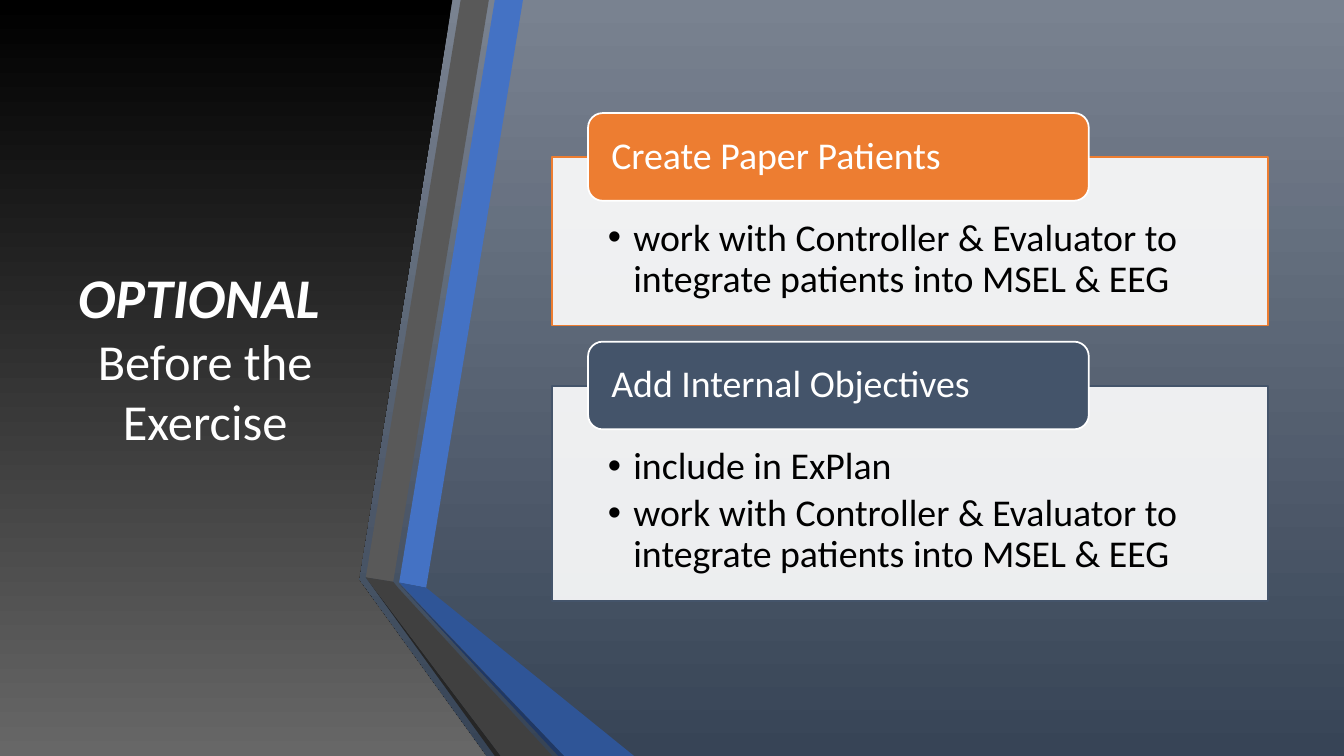
"""Builds the slide of optional steps before the exercise."""
from dataclasses import dataclass

from lxml.etree import SubElement
from pptx import Presentation
from pptx.dml.color import RGBColor
from pptx.enum.shapes import MSO_SHAPE as Preset
from pptx.enum.text import MSO_ANCHOR as Anchor, MSO_AUTO_SIZE as AutoSize, PP_ALIGN as Align
from pptx.oxml.ns import qn
from pptx.util import Cm, Pt


@dataclass(frozen=True)
class Theme:
    font: str = "Calibri"
    white: str = "FFFFFF"
    black: str = "000000"
    orange: str = "ED7D31"
    slate: str = "44546A"
    backdrop: tuple = ("798290", "374456")
    panel: tuple = ("000000", "676767")
    blue: str = "4472C4"
    blue_dark: str = "2F5597"
    blue_shade: str = "203864"
    grey: str = "595959"
    grey_dark: str = "404040"
    grey_shade: str = "262626"
    emphasis_size: float = 40
    title_size: float = 36
    text_size: float = 27
    outline: float = 1.25


class SlideBuilder:
    def __init__(self, slide, theme):
        self.slide, self.shapes, self.theme = slide, slide.shapes, theme

    def paint(self, fill, color):
        if isinstance(color, str):
            fill.solid()
            fill.fore_color.rgb = RGBColor.from_string(color)
            return
        fill.gradient()
        fill.gradient_angle = 270
        for stop, shade in zip(fill.gradient_stops, color):
            stop.color.rgb = RGBColor.from_string(shade)

    def outline(self, shape, color):
        self.paint(shape.line.fill, color)
        shape.line.width = Pt(self.theme.outline)

    def style(self, run, size, color, strong=False):
        run.font.name, run.font.size = self.theme.font, Pt(size)
        run.font.bold = run.font.italic = strong
        run.font.color.rgb = RGBColor.from_string(color)

    def place(self, shape, left, top, width, height):
        shape.left, shape.top, shape.width, shape.height = map(Cm, (left, top, width, height))
        self.shapes._spTree.append(shape._element)

    def frame(self, shape, anchor, side, top, bottom):
        frame = shape.text_frame
        frame.word_wrap, frame.auto_size = True, AutoSize.NONE
        frame.vertical_anchor = anchor
        frame.margin_left = frame.margin_right = Cm(side)
        frame.margin_top, frame.margin_bottom = Cm(top), Cm(bottom)
        return frame

    def polygon(self, color, points):
        start, *rest = [(Cm(x), Cm(y)) for x, y in points]
        outline = self.shapes.build_freeform(*start)
        outline.add_line_segments(rest, close=True)
        facet = outline.convert_to_shape()
        facet.shadow.inherit = False
        facet.line.fill.background()
        self.paint(facet.fill, color)

    def title(self, emphasis, rest, *box):
        heading = self.shapes.title
        self.place(heading, *box)
        frame = self.frame(heading, Anchor.MIDDLE, 0.25, 0.13, 0.13)
        frame.text = f"{emphasis}\v{rest}"
        paragraph = frame.paragraphs[0]
        paragraph.alignment = Align.CENTER
        first, second = paragraph.runs
        self.style(first, self.theme.emphasis_size, self.theme.white, strong=True)
        self.style(second, self.theme.title_size, self.theme.white)

    def card(self, body, color, items, *box):
        self.place(body, *box)
        self.paint(body.fill, self.theme.white)
        tint = body._element.spPr.find(qn("a:solidFill"))[0]
        SubElement(tint, qn("a:alpha"), val="90000")
        self.outline(body, color)
        frame = self.frame(body, Anchor.TOP, 1.4, 1.55, 0.53)
        frame.text = "\n".join(items)
        for item in frame.paragraphs:
            item.alignment, item.line_spacing = Align.LEFT, 0.9
            item.space_before, item.space_after = Pt(0), Pt(4)
            properties = item._p.get_or_add_pPr()
            properties.set("marL", str(Cm(0.64)))
            properties.set("indent", str(Cm(-0.64)))
            SubElement(properties, qn("a:buChar"), char="•")
            self.style(item.runs[0], self.theme.text_size, self.theme.black)

    def label(self, text, color, *box):
        tab = self.shapes.add_shape(Preset.ROUNDED_RECTANGLE, *map(Cm, box))
        tab.shadow.inherit = False
        self.paint(tab.fill, color)
        self.outline(tab, self.theme.white)
        frame = self.frame(tab, Anchor.MIDDLE, 0.48, 0, 0)
        frame.text = text
        paragraph = frame.paragraphs[0]
        paragraph.alignment, paragraph.line_spacing = Align.LEFT, 0.9
        self.style(paragraph.runs[0], self.theme.text_size, self.theme.white)


def main():
    deck = Presentation()
    deck.slide_width, deck.slide_height = Cm(33.87), Cm(19.05)
    theme = Theme()
    builder = SlideBuilder(deck.slides.add_slide(deck.slide_layouts[3]), theme)
    builder.paint(builder.slide.background.fill, theme.backdrop)

    builder.polygon(theme.panel, [(0, 0), (11.4, 0), (9.04, 14.61), (12.24, 19.05), (0, 19.05)])
    builder.title("OPTIONAL ", "Before the Exercise", 1.5, 1.9, 7.34, 14.17)

    ribbons = [
        (theme.blue, [(10.06, 14.68), (10.74, 14.81), (13.18, 0), (12.47, 0)]),
        (theme.grey, [(12.32, 0), (11.61, 0), (9.22, 14.55), (9.91, 14.66)]),
        (theme.grey_shade, [(9.22, 14.55), (12.47, 19.05), (12.62, 19.05)]),
        (theme.blue_shade, [(10.06, 14.71), (14.07, 19.05), (14.22, 19.05)]),
        (theme.blue_dark, [(10.06, 14.68), (14.22, 19.05), (15.98, 19.05), (10.74, 14.81)]),
        (theme.grey_dark, [(13.92, 19.05), (10.03, 14.81), (9.91, 14.66), (9.22, 14.55),
                           (12.62, 19.05)]),
    ]
    for color, points in ribbons:
        builder.polygon(color, points)

    teamwork = "work with Controller & Evaluator to integrate patients into MSEL & EEG"
    steps = [
        ("Create Paper Patients", theme.orange, [teamwork], 3.96, 4.24),
        ("Add Internal Objectives", theme.slate, ["include in ExPlan", teamwork], 9.72, 5.42),
    ]
    bodies = list(builder.slide.placeholders)[1:]
    for body, (name, color, items, top, height) in zip(bodies, steps):
        builder.card(body, color, items, 13.92, top, 18.03, height)
        builder.label(name, color, 14.82, top - 1.11, 12.62, 2.21)

    deck.save("out.pptx")


if __name__ == "__main__":
    main()
